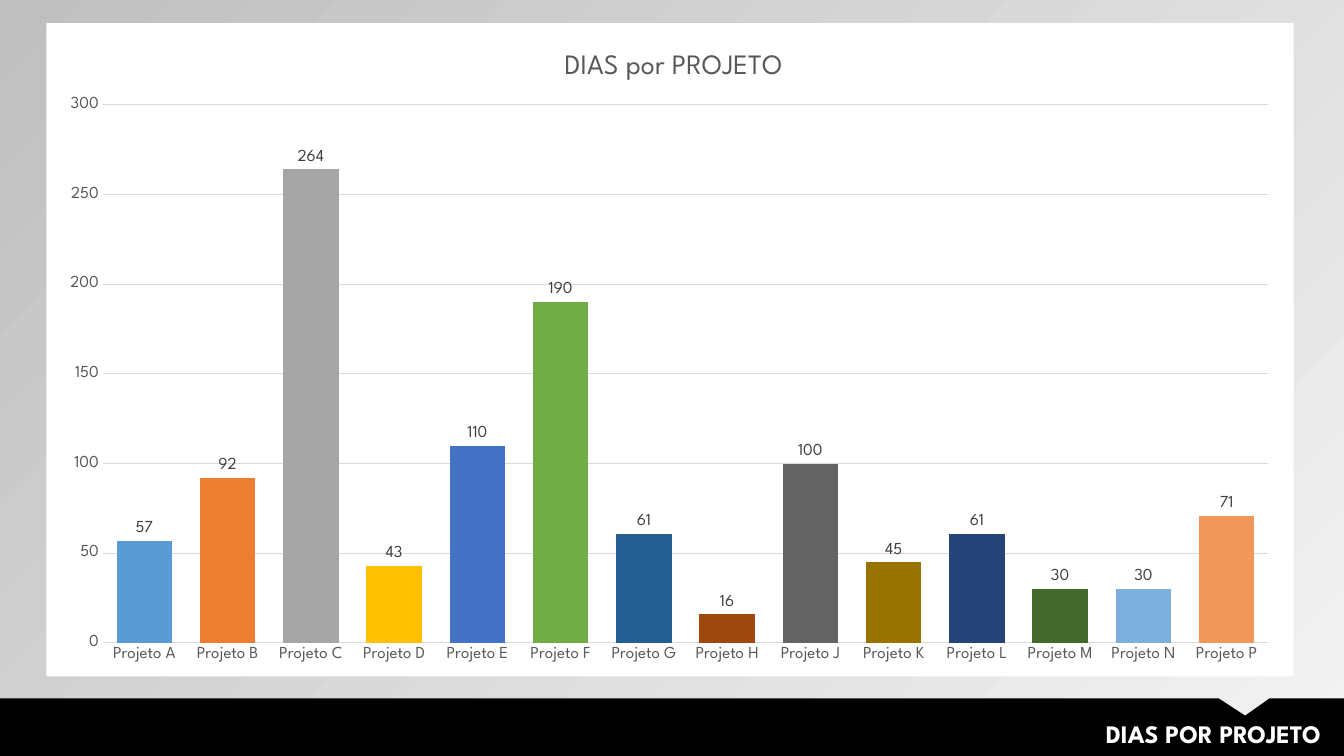
from lxml.etree import SubElement
from pptx import Presentation
from pptx.chart.data import CategoryChartData
from pptx.dml.color import RGBColor
from pptx.enum.chart import XL_CHART_TYPE, XL_LABEL_POSITION, XL_TICK_MARK
from pptx.enum.text import MSO_AUTO_SIZE, PP_ALIGN
from pptx.oxml import parse_xml
from pptx.oxml.ns import nsdecls, qn
from pptx.util import Inches, Pt

FONT = "League Spartan"
GRAY = "595959"
GRID = "D9D9D9"
CHART_LEFT, CHART_TOP, CHART_WIDTH, CHART_HEIGHT = 0.46, 0.23, 12.37, 6.48
PROJECTS = [
    ("A", 57, "5B9BD5"),
    ("B", 92, "ED7D31"),
    ("C", 264, "A5A5A5"),
    ("D", 43, "FFC000"),
    ("E", 110, "4472C4"),
    ("F", 190, "70AD47"),
    ("G", 61, "255E91"),
    ("H", 16, "9E480E"),
    ("J", 100, "636363"),
    ("K", 45, "997300"),
    ("L", 61, "264478"),
    ("M", 30, "43682B"),
    ("N", 30, "7CAFDD"),
    ("P", 71, "F1975A"),
]


def rgb(color):
    """Turn a hex string into a colour."""
    return RGBColor.from_string(color)


def style_font(font, size, color, bold=False):
    """Set typeface, size, colour and weight."""
    font.name = FONT
    font.size = Pt(size)
    font.bold = bold
    font.color.rgb = rgb(color)


def style_line(line, color):
    """Give a chart line its thin stroke."""
    line.width = Pt(0.75)
    line.color.rgb = rgb(color)


def paint_background(page):
    """Fill the page with a diagonal grey gradient."""
    fill = page.background.fill
    fill.gradient()
    fill.gradient_angle = 135
    for stop, position, color in zip(fill.gradient_stops, (0, 1), ("F2F2F2", "BFBFBF")):
        stop.position = position
        stop.color.rgb = rgb(color)


def add_footer_band(page):
    """Draw the black band with its notch."""
    corners = [(12.09, 6.93), (12.35, 7.1), (12.59, 6.93), (13.33, 6.93), (13.33, 7.5), (0, 7.5)]
    builder = page.shapes.build_freeform(0, Inches(6.93))
    builder.add_line_segments([(Inches(x), Inches(y)) for x, y in corners], close=True)
    band = builder.convert_to_shape()
    band.shadow.inherit = False
    band.fill.solid()
    band.fill.fore_color.rgb = rgb("000000")
    band.line.fill.background()


def add_footer_title(page, text):
    """Write the right-aligned title on the band."""
    box = page.shapes.add_textbox(Inches(4.14), Inches(7.08), Inches(9.06), Inches(0.4))
    frame = box.text_frame
    frame.word_wrap = True
    frame.auto_size = MSO_AUTO_SIZE.SHAPE_TO_FIT_TEXT
    para = frame.paragraphs[0]
    para.alignment = PP_ALIGN.RIGHT
    span = para.add_run()
    span.text = text
    style_font(span.font, 18, "FFFFFF", bold=True)


def set_layout(parent, index, settings):
    """Place a chart part by fractions of the chart area."""
    for old in parent.findall(qn("c:layout")):
        parent.remove(old)
    layout = parse_xml(f"<c:layout {nsdecls('c')}/>")
    manual = SubElement(layout, qn("c:manualLayout"))
    for name, value in settings:
        SubElement(manual, qn(f"c:{name}")).set("val", str(value))
    parent.insert(index, layout)


def fill_chart_area(chart, color):
    """Give the chart area a plain fill without an outline."""
    area = parse_xml(
        f'<c:spPr {nsdecls("c", "a")}><a:solidFill><a:srgbClr val="{color}"/></a:solidFill>'
        "<a:ln><a:noFill/></a:ln></c:spPr>"
    )
    chart.font._element.getparent().getparent().getparent().addprevious(area)


def add_chart_title(chart, text):
    """Write and place the chart title."""
    chart.has_title = True
    title = chart.chart_title
    span = title.text_frame.paragraphs[0].add_run()
    span.text = text
    style_font(span.font, 20, GRAY)
    set_layout(title._element, 1, [
        ("xMode", "edge"),
        ("yMode", "edge"),
        ("x", (5.55 - CHART_LEFT) / CHART_WIDTH),
        ("y", (0.46 - CHART_TOP) / CHART_HEIGHT),
    ])


def style_axes(chart):
    """Style both axes and the gridlines."""
    for axis in (chart.category_axis, chart.value_axis):
        axis.major_tick_mark = XL_TICK_MARK.NONE
        axis.minor_tick_mark = XL_TICK_MARK.NONE
        style_font(axis.tick_labels.font, 12, GRAY)
    style_line(chart.category_axis.format.line, GRID)
    values = chart.value_axis
    values.minimum_scale, values.maximum_scale, values.major_unit = 0, 300, 50
    values.format.line.fill.background()
    values.has_major_gridlines = True
    style_line(values.major_gridlines.format.line, GRID)


def style_columns(plot):
    """Colour each column and show its value."""
    plot.gap_width = 50
    plot.vary_by_categories = False
    series = plot.series[0]
    for index, (_, _, color) in enumerate(PROJECTS):
        fill = series.points[index].format.fill
        fill.solid()
        fill.fore_color.rgb = rgb(color)
    labels = series.data_labels
    labels.show_value = True
    labels.position = XL_LABEL_POSITION.OUTSIDE_END
    style_font(labels.font, 12, "404040")


def add_days_chart(page):
    """Add the column chart of days per project."""
    data = CategoryChartData()
    data.categories = [f"Projeto {letter}" for letter, _, _ in PROJECTS]
    data.add_series("Series 1", [days for _, days, _ in PROJECTS])
    bounds = [Inches(n) for n in (CHART_LEFT, CHART_TOP, CHART_WIDTH, CHART_HEIGHT)]
    chart = page.shapes.add_chart(XL_CHART_TYPE.COLUMN_CLUSTERED, *bounds, data).chart
    chart.has_legend = False
    style_font(chart.font, 10, "000000")
    fill_chart_area(chart, "FFFFFF")
    add_chart_title(chart, "DIAS por PROJETO")
    style_axes(chart)
    style_columns(chart.plots[0])
    set_layout(chart._chartSpace.chart.plotArea, 0, [
        ("layoutTarget", "inner"),
        ("xMode", "edge"),
        ("yMode", "edge"),
        ("x", (1.02 - CHART_LEFT) / CHART_WIDTH),
        ("y", (1.04 - CHART_TOP) / CHART_HEIGHT),
        ("w", 11.56 / CHART_WIDTH),
        ("h", 5.34 / CHART_HEIGHT),
    ])


def main():
    """Build the slide and save it."""
    deck = Presentation()
    deck.slide_width, deck.slide_height = Inches(13.33), Inches(7.5)
    page = deck.slides.add_slide(deck.slide_layouts[6])
    paint_background(page)
    add_footer_band(page)
    add_footer_title(page, "DIAS POR PROJETO")
    add_days_chart(page)
    deck.save("out.pptx")


if __name__ == "__main__":
    main()
